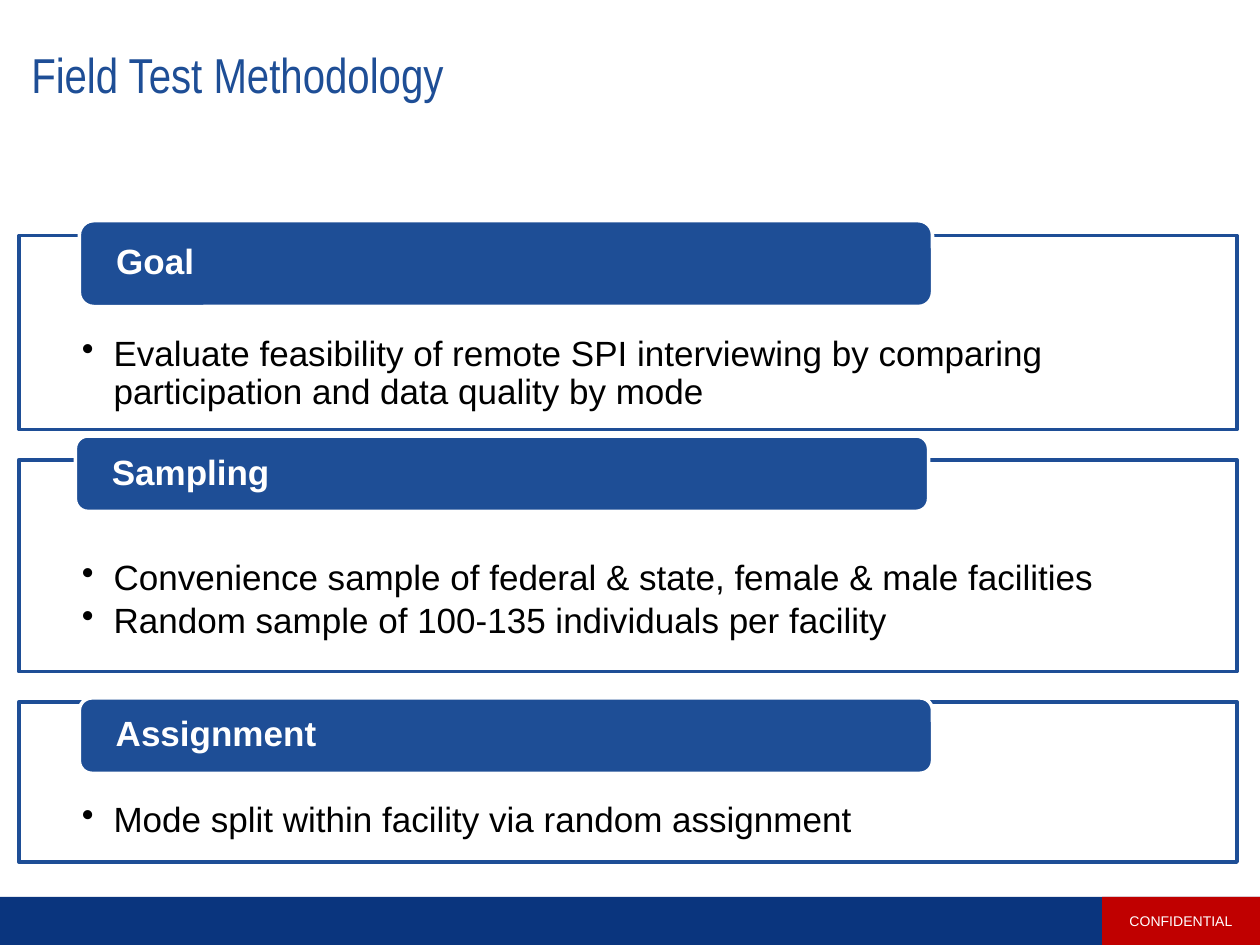
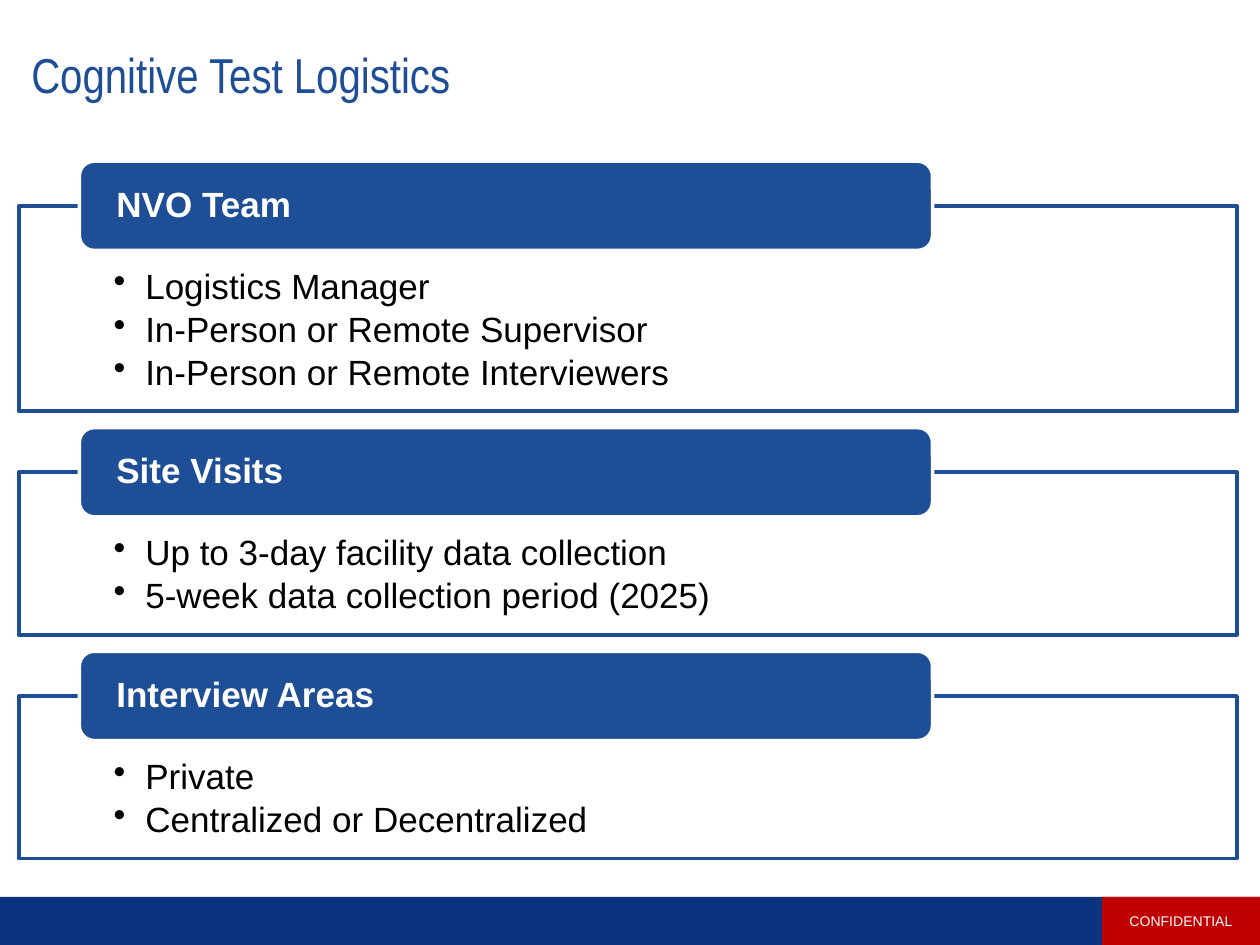
import pptx
import pptx.dml.color
import pptx.enum.shapes
import pptx.enum.text
import pptx.oxml
import pptx.oxml.ns
import pptx.util
from lxml import etree

Cm = pptx.util.Cm
Pt = pptx.util.Pt
SHAPE = pptx.enum.shapes.MSO_SHAPE
ALIGN = pptx.enum.text.PP_ALIGN
ANCHOR = pptx.enum.text.MSO_ANCHOR

# Shared colours and measures (cm)
BLUE, NAVY, RED = "1E4E96", "0A357E", "C00000"
WHITE, BLACK = "FFFFFF", "000000"
SLIDE_WIDTH, SLIDE_HEIGHT = 25.4, 19.05
MARGIN, CONTENT_WIDTH = 0.38, 24.56
BAND_TOP, BAND_HEIGHT = 18.08, 0.98
TAG_WIDTH = 3.18
TAB_LEFT, TAB_WIDTH = 1.6, 17.2
BULLET_INDENT = 0.64


def color(value):
    return pptx.dml.color.RGBColor.from_string(value)


def add_bullet(paragraph):
    properties = paragraph._p.get_or_add_pPr()
    properties.set("marL", str(Cm(BULLET_INDENT)))
    properties.set("indent", str(-Cm(BULLET_INDENT)))
    bullet = etree.SubElement(properties, pptx.oxml.ns.qn("a:buChar"))
    bullet.set("char", "•")


def set_text(shape, lines, size=20, font="Arial", text_color=BLACK, bold=False,
             align=ALIGN.LEFT, anchor=ANCHOR.MIDDLE, insets=(0.25, 0.13, 0.25, 0.13),
             line_spacing=0.9, space_after=0, bullets=False):
    """Write lines as paragraphs; insets are left, top, right, bottom in cm."""
    frame = shape.text_frame
    frame.word_wrap = True
    frame.auto_size = pptx.enum.text.MSO_AUTO_SIZE.NONE
    frame.vertical_anchor = anchor
    (frame.margin_left, frame.margin_top,
     frame.margin_right, frame.margin_bottom) = [Cm(inset) for inset in insets]
    for index, line in enumerate(lines):
        paragraph = frame.paragraphs[0] if index == 0 else frame.add_paragraph()
        if bullets:
            add_bullet(paragraph)
        paragraph.alignment = align
        paragraph.line_spacing = line_spacing
        paragraph.space_before = Pt(0)
        paragraph.space_after = Pt(space_after)
        run = paragraph.add_run()
        run.text = line
        run.font.size = Pt(size)
        run.font.name = font
        run.font.bold = bold
        run.font.color.rgb = color(text_color)


def add_box(slide, kind, left, top, width, height, fill, line=None):
    shape = slide.shapes.add_shape(kind, Cm(left), Cm(top), Cm(width), Cm(height))
    shape.shadow.inherit = False
    shape.fill.solid()
    shape.fill.fore_color.rgb = color(fill)
    if line:
        shape.line.color.rgb = color(line)
        shape.line.width = Pt(2)
    else:
        shape.line.fill.background()
    return shape


def add_base_slide(presentation, title):
    """Title, footer band and confidentiality tag."""
    slide = presentation.slides.add_slide(presentation.slide_layouts[5])
    heading = slide.shapes.title
    heading.left, heading.top = Cm(MARGIN), Cm(0.51)
    heading.width, heading.height = Cm(CONTENT_WIDTH), Cm(2.11)
    set_text(heading, [title], size=28, font="Arial Narrow", text_color=BLUE,
             insets=(0.25, 0.25, 0.51, 0.25))
    add_box(slide, SHAPE.RECTANGLE, 0, BAND_TOP, SLIDE_WIDTH, BAND_HEIGHT, NAVY)
    tag = add_box(slide, SHAPE.RECTANGLE, SLIDE_WIDTH - TAG_WIDTH, BAND_TOP,
                  TAG_WIDTH, BAND_HEIGHT, RED)
    set_text(tag, ["CONFIDENTIAL"], size=8, text_color=WHITE, align=ALIGN.CENTER,
             line_spacing=1.0, space_after=6)
    return slide


def add_section(slide, heading, items, top, height, tab_top, tab_height,
                text_left, text_top, tab_left=TAB_LEFT):
    """Outlined frame with bullets and a heading tab over its top edge."""
    frame = add_box(slide, SHAPE.RECTANGLE, MARGIN, top, CONTENT_WIDTH, height,
                    WHITE, BLUE)
    set_text(frame, items, anchor=ANCHOR.TOP, space_after=3, bullets=True,
             insets=(text_left, text_top, 1.91, 0.41))
    tab = add_box(slide, SHAPE.ROUNDED_RECTANGLE, tab_left, tab_top,
                  TAB_WIDTH, tab_height, BLUE, WHITE)
    set_text(tab, [heading], text_color=WHITE, bold=True, insets=(0.66, 0, 0.66, 0))


def add_methodology_slide(presentation):
    slide = add_base_slide(presentation, "Field Test Methodology")
    text_place = {"text_left": 1.27, "text_top": 2.03}
    add_section(slide, "Goal",
                ["Evaluate feasibility of remote SPI interviewing by comparing "
                 "participation and data quality by mode"],
                4.75, 3.91, 4.45, 1.73, **text_place)
    add_section(slide, "Sampling",
                ["Convenience sample of federal & state, female & male facilities",
                 "Random sample of 100-135 individuals per facility"],
                9.27, 4.27, 8.79, 1.52, tab_left=1.52, **text_place)
    add_section(slide, "Assignment",
                ["Mode split within facility via random assignment"],
                14.15, 3.23, 14.07, 1.52, **text_place)


def add_logistics_slide(presentation):
    slide = add_base_slide(presentation, "Cognitive Test Logistics")
    sections = [
        ("NVO Team", ["Logistics Manager", "In-Person or Remote Supervisor",
                      "In-Person or Remote Interviewers"]),
        ("Site Visits", ["Up to 3-day facility data collection",
                         "5-week data collection period (2025)"]),
        ("Interview Areas", ["Private", "Centralized or Decentralized"]),
    ]
    # Frames grow with their item count and follow at equal gaps
    top, gap = 4.15, 1.23
    for heading, items in sections:
        height = 1.56 + 0.86 * len(items)
        add_section(slide, heading, items, top, height, top - 0.9, 1.8,
                    text_left=1.91, text_top=1.27)
        top += height + gap


def main():
    presentation = pptx.Presentation()
    presentation.slide_width = Cm(SLIDE_WIDTH)
    presentation.slide_height = Cm(SLIDE_HEIGHT)
    add_methodology_slide(presentation)
    add_logistics_slide(presentation)
    presentation.save("out.pptx")


if __name__ == "__main__":
    main()
